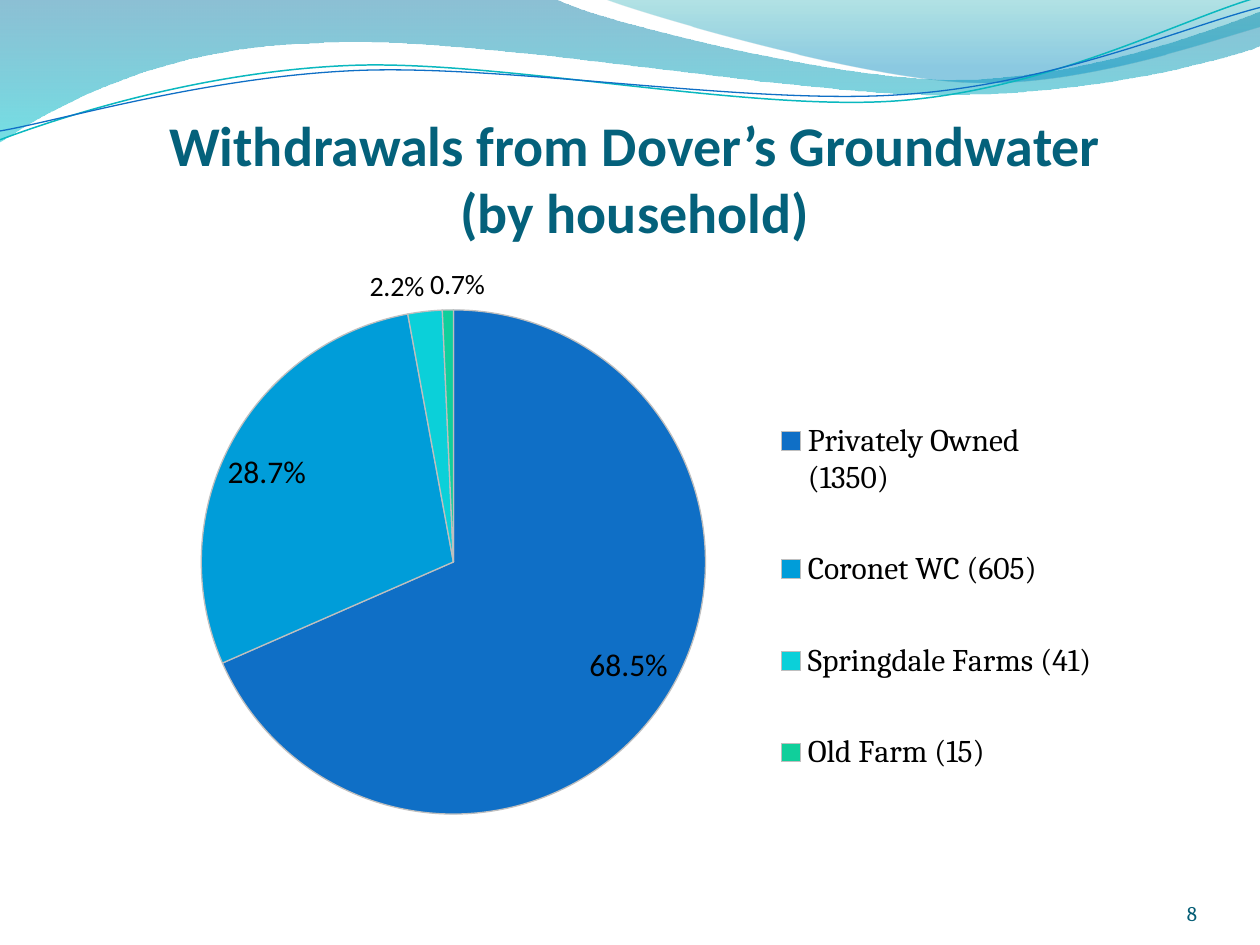
from math import cos, radians, sin

from lxml import etree
from pptx import Presentation
from pptx.chart.data import CategoryChartData
from pptx.dml.color import RGBColor
from pptx.enum.chart import XL_CHART_TYPE, XL_LABEL_POSITION, XL_LEGEND_POSITION
from pptx.enum.text import MSO_ANCHOR, PP_ALIGN
from pptx.oxml import parse_xml
from pptx.oxml.ns import nsdecls, qn
from pptx.util import Inches, Pt

BLACK = RGBColor(0, 0, 0)
TITLE_TEAL = RGBColor(0x04, 0x61, 0x7B)
NUMBER_TEAL = RGBColor(0x04, 0x5D, 0x75)
SLICE_EDGE = RGBColor(0xBF, 0xBF, 0xBF)
LINE_TEAL = RGBColor(0x0A, 0xB8, 0xBF)
BLUE = RGBColor(0x0F, 0x6F, 0xC6)

# Gradient stops: position, colour, opacity in percent
BACK_WAVE_STOPS = [(0, RGBColor(0x00, 0x74, 0xA1), 45), (1, RGBColor(0x00, 0xC6, 0xCF), 55)]
FRONT_WAVE_STOPS = [(0, RGBColor(0x00, 0xA1, 0xA9), 30), (0.8, RGBColor(0x00, 0x8B, 0xBF), 45)]

# Outlines: a pair is a straight step, six numbers are a cubic curve
BACK_WAVE = [
    (0, 0), (4.4, -0.01),
    (4.76, 0.17, 6.64, 0.63, 7.58, 0.63), (8.53, 0.63, 9.58, 0.26, 10, 0.09),
    (10.01, 0.36),
    (9.83, 0.44, 8.7, 0.76, 7.46, 0.75), (6.22, 0.75, 3.82, 0.28, 2.57, 0.34),
    (1.29, 0.36, 0.46, 0.83, -0.01, 1.13),
]
FRONT_WAVE = [
    (4.79, -0.01),
    (5.09, 0.11, 6.82, 0.62, 7.69, 0.65), (8.56, 0.69, 9.61, 0.32, 10, 0.21),
    (10, 0),
]
TEAL_CURVE = [
    (0, 1.11),
    (0.48, 0.93, 1.58, 0.57, 2.77, 0.52), (3.95, 0.47, 5.93, 0.89, 7.13, 0.8),
    (8.33, 0.71, 9.38, 0.15, 9.98, -0.02),
]
BLUE_CURVE = [
    (0, 1.04),
    (0.47, 0.96, 1.64, 0.61, 2.83, 0.56), (4.03, 0.51, 5.97, 0.84, 7.17, 0.75),
    (8.36, 0.67, 9.41, 0.21, 10, 0.06),
]
CURVE_TILT = -2.7

# Category, percentage, colour, label size, label position, label shift
SLICES = [
    ("Privately Owned  (1350)", 68.5, BLUE, 18, XL_LABEL_POSITION.INSIDE_END, (0.01, -0.02)),
    ("Coronet WC (605)", 28.7, RGBColor(0x00, 0x9D, 0xD9), 18,
     XL_LABEL_POSITION.INSIDE_END, (-0.01, 0.01)),
    ("Springdale Farms (41)", 2.2, RGBColor(0x0B, 0xD0, 0xD9), 16,
     XL_LABEL_POSITION.OUTSIDE_END, None),
    ("Old Farm (15)", 0.7, RGBColor(0x10, 0xCF, 0x9B), 16,
     XL_LABEL_POSITION.OUTSIDE_END, (0.01, 0)),
]


def turn(segment, center, degrees):
    """Rotate each point of a segment about the center."""
    angle = radians(degrees)
    turned = []
    for x, y in zip(segment[::2], segment[1::2]):
        x, y = x - center[0], y - center[1]
        turned += [center[0] + x * cos(angle) - y * sin(angle),
                   center[1] + x * sin(angle) + y * cos(angle)]
    return turned


def add_outline(slide, path, close):
    """Draw the end points as a freeform, then bend the curved steps."""
    segments = [[Inches(value) for value in segment] for segment in path]
    ends = [segment[-2:] for segment in segments]
    builder = slide.shapes.build_freeform(*ends[0])
    builder.add_line_segments(ends[1:], close=close)
    shape = builder.convert_to_shape()
    shape.shadow.inherit = False
    steps = list(shape._element.spPr.iter(qn("a:lnTo")))
    for step, segment in zip(steps, segments[1:]):
        if len(segment) == 6:
            curve = etree.Element(qn("a:cubicBezTo"))
            for x, y in zip(segment[::2], segment[1::2]):
                etree.SubElement(curve, qn("a:pt"), x=str(x - shape.left), y=str(y - shape.top))
            step.getparent().replace(step, curve)
    return shape


def add_wave(slide, path, stops):
    shape = add_outline(slide, path, close=True)
    shape.line.fill.background()
    shape.fill.gradient()
    shape.fill.gradient_angle = 270
    for stop, (position, color, _) in zip(shape.fill.gradient_stops, stops):
        stop.position = position
        stop.color.rgb = color
    colors = list(shape._element.spPr.iter(qn("a:srgbClr")))
    for color, (_, _, opacity) in zip(colors, stops):
        etree.SubElement(color, qn("a:alpha"), val=str(opacity * 1000))


def add_curve(slide, path, center, color, width):
    """Add a tilted line whose path is given as it lies on the slide."""
    level_path = [turn(segment, center, -CURVE_TILT) for segment in path]
    shape = add_outline(slide, level_path, close=False)
    middle = ((shape.left + shape.width / 2) / Inches(1),
              (shape.top + shape.height / 2) / Inches(1))
    x, y = turn(middle, center, CURVE_TILT)
    shape.left = Inches(x) - shape.width // 2
    shape.top = Inches(y) - shape.height // 2
    shape.rotation = CURVE_TILT
    shape.fill.background()
    shape.line.color.rgb = color
    shape.line.width = Pt(width)


def set_font(font, name, size, color, bold=False):
    font.name = name
    font.size = Pt(size)
    font.color.rgb = color
    font.bold = bold


def add_text(slide, box, text, alignment, font):
    shape = slide.shapes.add_textbox(*map(Inches, box))
    text_frame = shape.text_frame
    text_frame.word_wrap = True
    text_frame.text = text
    for paragraph in text_frame.paragraphs:
        paragraph.alignment = alignment
        for run in paragraph.runs:
            set_font(run.font, *font)
    return text_frame


def layout_xml(**settings):
    """Manual chart layout, its settings given in schema order."""
    parts = "".join(f'<c:{name} val="{value}"/>' for name, value in settings.items())
    return parse_xml(
        f'<c:layout {nsdecls("c")}><c:manualLayout>{parts}</c:manualLayout></c:layout>')


def place(element, before, **settings):
    """Put a manual layout into a chart part, ahead of the first child named in before."""
    for old in element.findall(qn("c:layout")):
        element.remove(old)
    following = next(child for child in element if child.tag in map(qn, before))
    following.addprevious(layout_xml(**settings))


def format_slice(point, value, color, size, position, shift):
    point.format.fill.solid()
    point.format.fill.fore_color.rgb = color
    point.format.line.color.rgb = SLICE_EDGE
    point.format.line.width = Pt(0.75)
    label = point.data_label
    label.text_frame.text = f"{value}%"
    set_font(label.text_frame.paragraphs[0].runs[0].font, "Calibri", size, BLACK)
    label.position = position
    if shift:
        index = label._dLbl.find(qn("c:idx"))
        index.addnext(layout_xml(x=shift[0], y=shift[1]))


def add_household_pie(slide):
    data = CategoryChartData(number_format='0.0"%"')
    data.categories = [entry[0] for entry in SLICES]
    data.add_series("Series 1", [entry[1] for entry in SLICES])
    chart = slide.shapes.add_chart(
        XL_CHART_TYPE.PIE, Inches(1.08), Inches(2), Inches(7.75), Inches(4.6), data).chart
    set_font(chart.font, "Cambria", 18, BLACK)
    chart.has_title = False
    chart.has_legend = True
    chart.legend.position = XL_LEGEND_POSITION.RIGHT
    chart.legend.include_in_layout = False
    plot = chart.plots[0]
    plot.vary_by_categories = True
    series = plot.series[0]
    for index, (_, *settings) in enumerate(SLICES):
        format_slice(series.points[index], *settings)
    series.data_labels.show_value = True
    for leader_lines in chart._chartSpace.iter(qn("c:showLeaderLines")):
        leader_lines.set("val", "0")

    place(chart._chartSpace.chart.plotArea, ["c:pieChart"], layoutTarget="inner",
          xMode="edge", yMode="edge", x=0.06, y=0.1, w=0.53, h=0.87)
    place(chart.legend._element, ["c:overlay", "c:spPr", "c:txPr"],
          xMode="edge", yMode="edge", x=0.65, y=0.2, w=0.34, h=0.79)


def main():
    presentation = Presentation()
    presentation.slide_width = Inches(10)
    presentation.slide_height = Inches(7.5)
    slide = presentation.slides.add_slide(presentation.slide_layouts[6])

    add_wave(slide, BACK_WAVE, BACK_WAVE_STOPS)
    add_wave(slide, FRONT_WAVE, FRONT_WAVE_STOPS)
    add_curve(slide, TEAL_CURVE, (4.99, 0.57), LINE_TEAL, 0.85)
    add_curve(slide, BLUE_CURVE, (5, 0.59), BLUE, 0.75)

    number = add_text(slide, (8.67, 6.95, 0.83, 0.4), "8", PP_ALIGN.RIGHT,
                      ("Cambria", 12, NUMBER_TEAL))
    number.vertical_anchor = MSO_ANCHOR.BOTTOM
    number.margin_left = number.margin_right = number.margin_top = number.margin_bottom = 0

    add_household_pie(slide)
    add_text(slide, (1, 0.83, 8.08, 1.18),
             "Withdrawals from Dover’s Groundwater\n(by household)", PP_ALIGN.CENTER,
             ("Calibri", 32, TITLE_TEAL, True))
    presentation.save("out.pptx")


if __name__ == "__main__":
    main()
